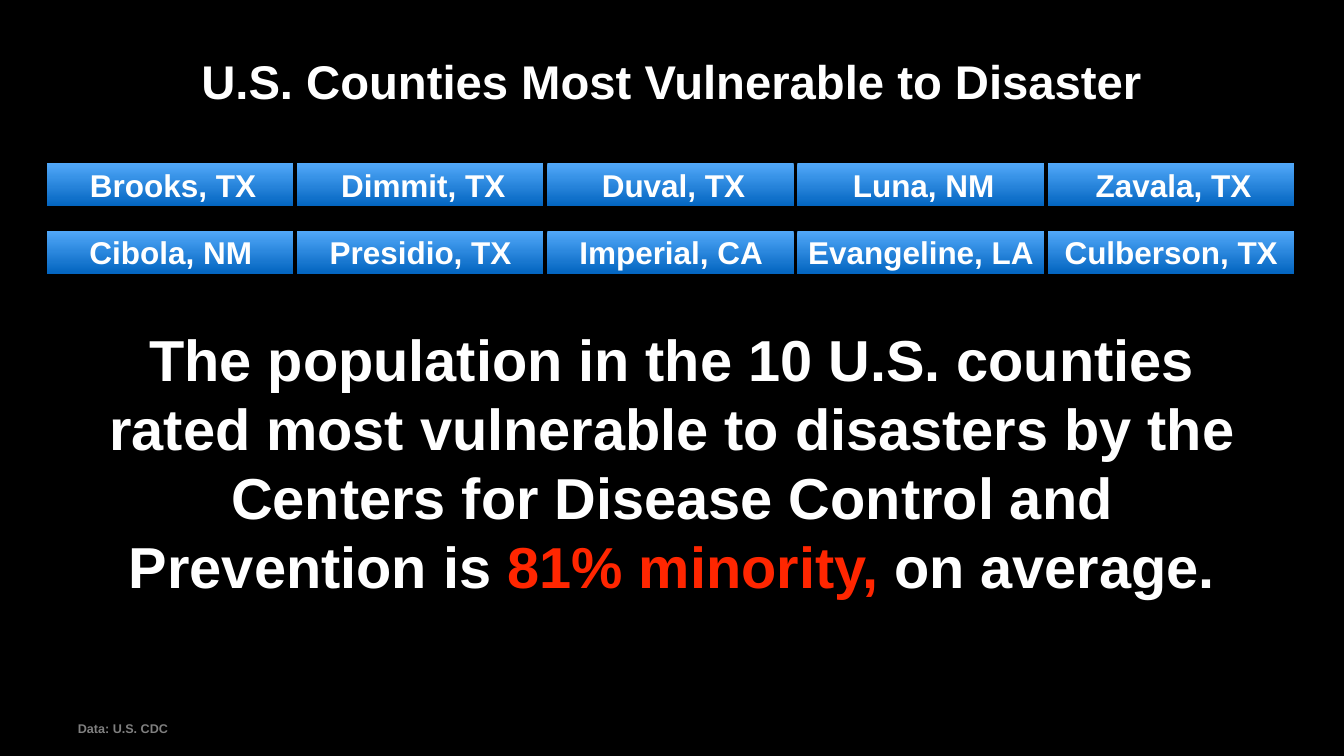
"""Build the slide on the U.S. counties most vulnerable to disaster."""
import pptx
import pptx.dml.color
import pptx.enum.shapes
import pptx.enum.text
import pptx.util
from lxml import etree

RGB = pptx.dml.color.RGBColor
BLACK = RGB(0, 0, 0)
WHITE = RGB(255, 255, 255)
RED = RGB(0xFF, 0x26, 0x00)
SKY = RGB(0x51, 0xA8, 0xF9)
BLUE = RGB(0x03, 0x65, 0xC0)
PX = 9144
ALIGN = pptx.enum.text.PP_ALIGN
ANCHOR = pptx.enum.text.MSO_ANCHOR
FIT = pptx.enum.text.MSO_AUTO_SIZE
RECT = pptx.enum.shapes.MSO_SHAPE.RECTANGLE

BAR_W, BAR_H, STEP, LEFT = 326, 57, 331, 62
ROWS = [
    (216, 4, [("Brooks, TX", 232), ("Dimmit, TX", 230), ("Duval, TX", 202),
              ("Luna, NM", 200), ("Zavala, TX", 219)]),
    (305, 1, [("Cibola, NM", 228), ("Presidio, TX", 253), ("Imperial, CA", 256),
              ("Evangeline, LA", 311), ("Culberson, TX", 295)]),
]


class Deck:
    """Hold the style and the current slide."""

    def __init__(self, width, height):
        self.font = "Arial"
        self.prs = pptx.Presentation()
        self.prs.slide_width = width * PX
        self.prs.slide_height = height * PX
        self.slide = self.prs.slides.add_slide(self.prs.slide_layouts[6])
        back = self.slide.background.fill
        back.solid()
        back.fore_color.rgb = BLACK

    def text(self, box, parts, size, inset, home=None, align=ALIGN.CENTER,
             anchor=ANCHOR.MIDDLE, wrap=True, fit=FIT.SHAPE_TO_FIT_TEXT,
             lead=None, alpha=None):
        """Add a text box from (words, colour) parts; no colour means white."""
        shapes = (home or self.slide).shapes
        frame = shapes.add_textbox(*(n * PX for n in box)).text_frame
        frame.margin_left = frame.margin_right = inset * PX
        frame.margin_top = frame.margin_bottom = inset * PX
        frame.word_wrap = wrap
        frame.auto_size = fit
        frame.vertical_anchor = anchor
        para = frame.paragraphs[0]
        para.alignment = align
        if lead:
            para.line_spacing = pptx.util.Pt(lead)
        font = para.font
        font.name, font.bold = self.font, True
        font.size = pptx.util.Pt(size)
        font.color.rgb = WHITE
        if alpha:
            for tint in para._p.xpath(".//a:srgbClr"):
                tag = pptx.oxml.ns.qn("a:alpha")
                etree.SubElement(tint, tag).set("val", str(alpha * 1000))
        for words, color in parts:
            run = para.add_run()
            run.text = words
            if color:
                run.font.color.rgb = color

    def bar(self, box, home):
        """Add a bar shaded from top to bottom."""
        shape = home.shapes.add_shape(RECT, *(n * PX for n in box))
        shape.shadow.inherit = False
        shape.line.fill.background()
        shape.fill.gradient()
        shape.fill.gradient_angle = 270
        for stop, color in zip(shape.fill.gradient_stops, (SKY, BLUE)):
            stop.color.rgb = color

    def row(self, top, shift, names):
        """Add a grouped row of bars with a centred name on each."""
        group = self.slide.shapes.add_group_shape()
        lefts = [LEFT + i * STEP for i in range(len(names))]
        for left in lefts:
            self.bar((left, top, BAR_W, BAR_H), group)
        for left, (name, width) in zip(lefts, names):
            start = left + shift + (BAR_W - width) // 2
            self.text((start, top, width, BAR_H), [(name, None)], 30, 6,
                      home=group, wrap=False)


def main():
    """Draw the slide and save it."""
    deck = Deck(1778, 1000)
    deck.text((94, 65, 1589, 83),
              [("U.S. Counties Most Vulnerable to Disaster", None)], 45, 4,
              anchor=ANCHOR.TOP, fit=FIT.NONE, lead=54)
    deck.text((100, 950, 783, 26), [("Data: U.S. CDC", None)], 12, 3,
              align=ALIGN.LEFT, anchor=ANCHOR.BOTTOM, alpha=50)
    for top, shift, names in ROWS:
        deck.row(top, shift, names)
    deck.text((101, 429, 1576, 364), [
        ("The population in the 10 U.S. counties rated most vulnerable to "
         "disasters by the Centers for Disease Control and Prevention is ", None),
        ("81% minority,", RED),
        (" on average.", None),
    ], 55, 6)
    deck.prs.save("out.pptx")


if __name__ == "__main__":
    main()
